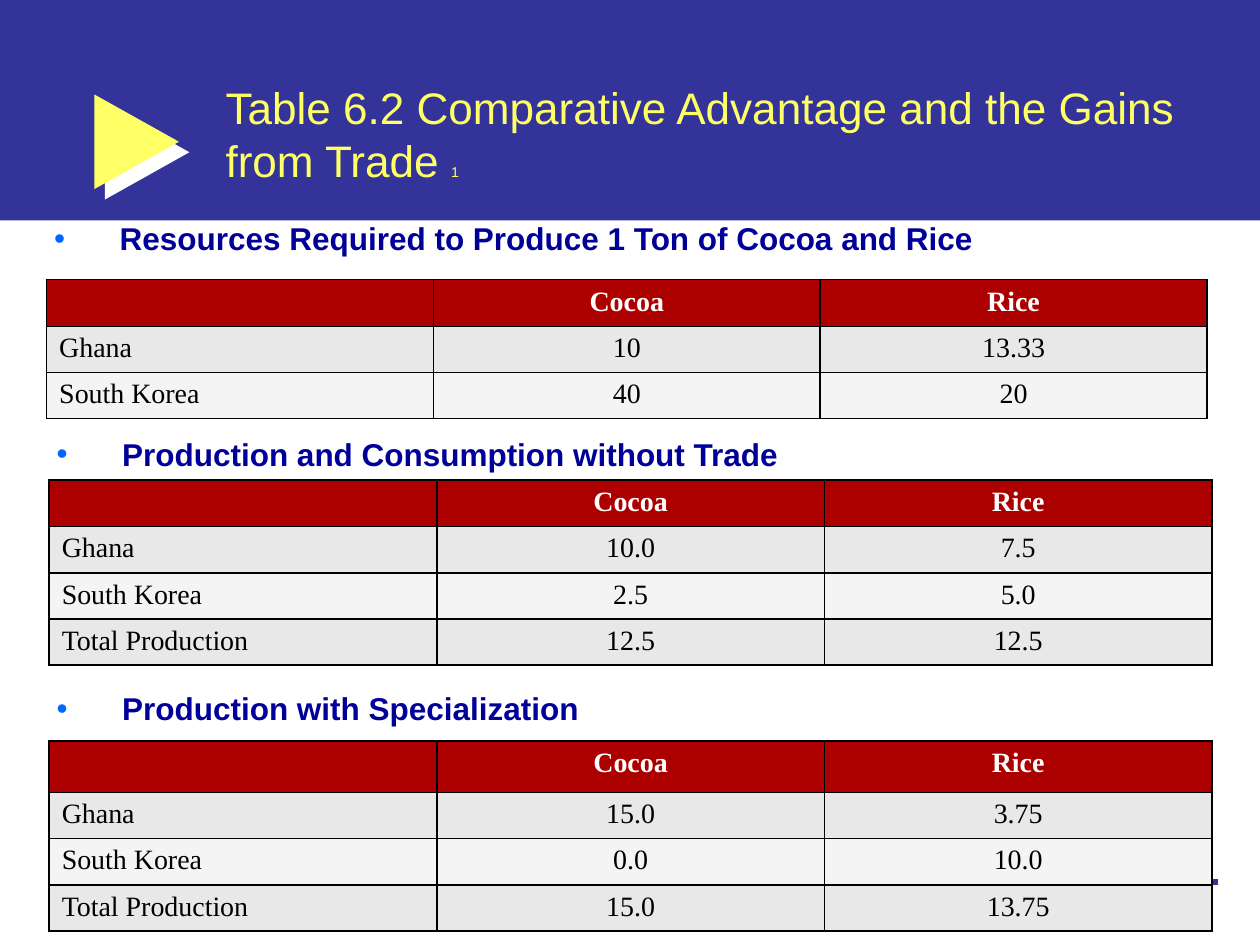
from dataclasses import dataclass

from lxml import etree
from pptx import Presentation
from pptx.dml.color import RGBColor
from pptx.enum import shapes, text
from pptx.oxml import ns
from pptx.util import Inches, Pt

NAVY, YELLOW, WHITE, BLACK = "333399", "FFFF66", "FFFFFF", "000000"
HEADING, BULLET, HEADER = "000099", "0066FF", "AC0000"
BANDS = ["E8E8E8", "F4F4F4"]
COMPARISON_LAYOUT = 4
HEADING_INDENT = Inches(0.52)


@dataclass
class Section:
    """A bulleted heading and its table; boxes are left, top, width, height."""
    heading: str
    heading_box: tuple[float, float, float, float]
    table_box: tuple[float, float, float, float]
    header_height: float
    rows: list[tuple[str, str, str]]


SECTIONS = [
    Section("Resources Required to Produce 1 Ton of Cocoa and Rice",
            (0.33, 1.69, 9.25, 0.42), (0.37, 2.22, 9.21, 1.1), 0.37,
            [("Ghana", "10", "13.33"), ("South Korea", "40", "20")]),
    Section("Production and Consumption without Trade",
            (0.35, 3.4, 9.35, 0.43), (0.39, 3.81, 9.23, 1.47), 0.37,
            [("Ghana", "10.0", "7.5"), ("South Korea", "2.5", "5.0"),
             ("Total Production", "12.5", "12.5")]),
    Section("Production with Specialization",
            (0.35, 5.42, 9.25, 0.46), (0.39, 5.88, 9.23, 1.51), 0.41,
            [("Ghana", "15.0", "3.75"), ("South Korea", "0.0", "10.0"),
             ("Total Production", "15.0", "13.75")]),
]


def rgb(color: str) -> RGBColor:
    return RGBColor.from_string(color)


def add_element(parent, tag: str, **attributes):
    attributes = {name: str(value) for name, value in attributes.items()}
    return etree.SubElement(parent, ns.qn(tag), attributes)


def set_font(font, name: str, size: float, color: str, bold: bool = False) -> None:
    font.name, font.size, font.bold = name, Pt(size), bold
    font.color.rgb = rgb(color)


def add_filled(slide, kind, box, color: str):
    shape = slide.shapes.add_shape(kind, *map(Inches, box))
    shape.shadow.inherit = False
    shape.fill.solid()
    shape.fill.fore_color.rgb = rgb(color)
    shape.line.fill.background()
    return shape


def add_background(slide) -> None:
    add_filled(slide, shapes.MSO_SHAPE.RECTANGLE, (0, 0, 10, 1.75), NAVY)

    arrow = add_filled(slide, shapes.MSO_SHAPE.RIGHT_ARROW, (0.75, 0.75, 0.67, 0.75), YELLOW)
    arrow.adjustments[0], arrow.adjustments[1] = 0.384, 1
    effects = arrow.element.spPr.find(ns.qn("a:effectLst"))
    shadow = add_element(effects, "a:outerShdw", blurRad=0, dist=Pt(8.5),
                         dir=45 * 60000, algn="ctr", rotWithShape=0)
    add_element(shadow, "a:srgbClr", val=WHITE)

    rule = slide.shapes.add_connector(
        shapes.MSO_CONNECTOR.STRAIGHT, Inches(0.58), Inches(7), Inches(9.67), Inches(7))
    rule.line.color.rgb = rgb(NAVY)
    rule.line.width = Pt(3)
    add_element(rule.element.spPr, "a:effectLst")


def place(placeholder, box, anchor):
    """Move a placeholder to its box, in front of earlier shapes; return its paragraph."""
    placeholder.left, placeholder.top, placeholder.width, placeholder.height = map(Inches, box)
    placeholder.element.getparent().append(placeholder.element)
    frame = placeholder.text_frame
    frame.word_wrap = True
    frame.auto_size = text.MSO_AUTO_SIZE.NONE
    frame.vertical_anchor = anchor
    para = frame.paragraphs[0]
    para.alignment = text.PP_ALIGN.LEFT
    para.space_before = Pt(0)
    return para


def fill_title(title) -> None:
    para = place(title, (1.69, 0.77, 7.8, 0.58), text.MSO_ANCHOR.MIDDLE)
    set_font(para.font, "Arial", 25.2, YELLOW)
    para.add_run().text = "Table 6.2 Comparative Advantage and the Gains from Trade "
    number = para.add_run()
    number.text = "1"
    number.font.size = Pt(8.1)


def fill_heading(placeholder, section: Section) -> None:
    para = place(placeholder, section.heading_box, text.MSO_ANCHOR.TOP)
    para.text = section.heading
    properties = para._p.get_or_add_pPr()
    properties.set("marL", str(HEADING_INDENT))
    properties.set("indent", str(-HEADING_INDENT))
    add_element(add_element(properties, "a:buClr"), "a:srgbClr", val=BULLET)
    add_element(properties, "a:buFont", typeface="Arial")
    add_element(properties, "a:buChar", char="•")
    set_font(para.font, "Arial", 18, HEADING, bold=True)


def format_cell(cell, content: str, fill: str, color: str, bold: bool, centered: bool) -> None:
    cell.text = content
    para = cell.text_frame.paragraphs[0]
    para.alignment = text.PP_ALIGN.CENTER if centered else text.PP_ALIGN.LEFT
    set_font(para.font, "Times New Roman", 16, color, bold)
    properties = cell._tc.get_or_add_tcPr()
    for side in ("a:lnL", "a:lnR", "a:lnT", "a:lnB"):
        border = add_element(properties, side, w=Pt(1))
        add_element(add_element(border, "a:solidFill"), "a:srgbClr", val=BLACK)
    cell.fill.solid()
    cell.fill.fore_color.rgb = rgb(fill)


def add_section_table(slide, section: Section) -> None:
    rows = [("", "Cocoa", "Rice"), *section.rows]
    frame = slide.shapes.add_table(len(rows), 3, *map(Inches, section.table_box))
    table = frame.table
    body_height = (section.table_box[3] - section.header_height) / len(section.rows)
    for index, row in enumerate(rows):
        is_header = index == 0
        table.rows[index].height = Inches(section.header_height if is_header else body_height)
        fill = HEADER if is_header else BANDS[(index - 1) % 2]
        for column, content in enumerate(row):
            format_cell(table.cell(index, column), content, fill,
                        WHITE if is_header else BLACK, is_header, column > 0)


def main() -> None:
    deck = Presentation()
    deck.slide_width, deck.slide_height = Inches(10), Inches(7.5)
    slide = deck.slides.add_slide(deck.slide_layouts[COMPARISON_LAYOUT])
    title, *bodies = list(slide.placeholders)
    spare = bodies.pop().element
    spare.getparent().remove(spare)

    add_background(slide)
    fill_title(title)
    for placeholder, section in zip(bodies, SECTIONS):
        fill_heading(placeholder, section)
        add_section_table(slide, section)
    deck.save("out.pptx")


if __name__ == "__main__":
    main()
